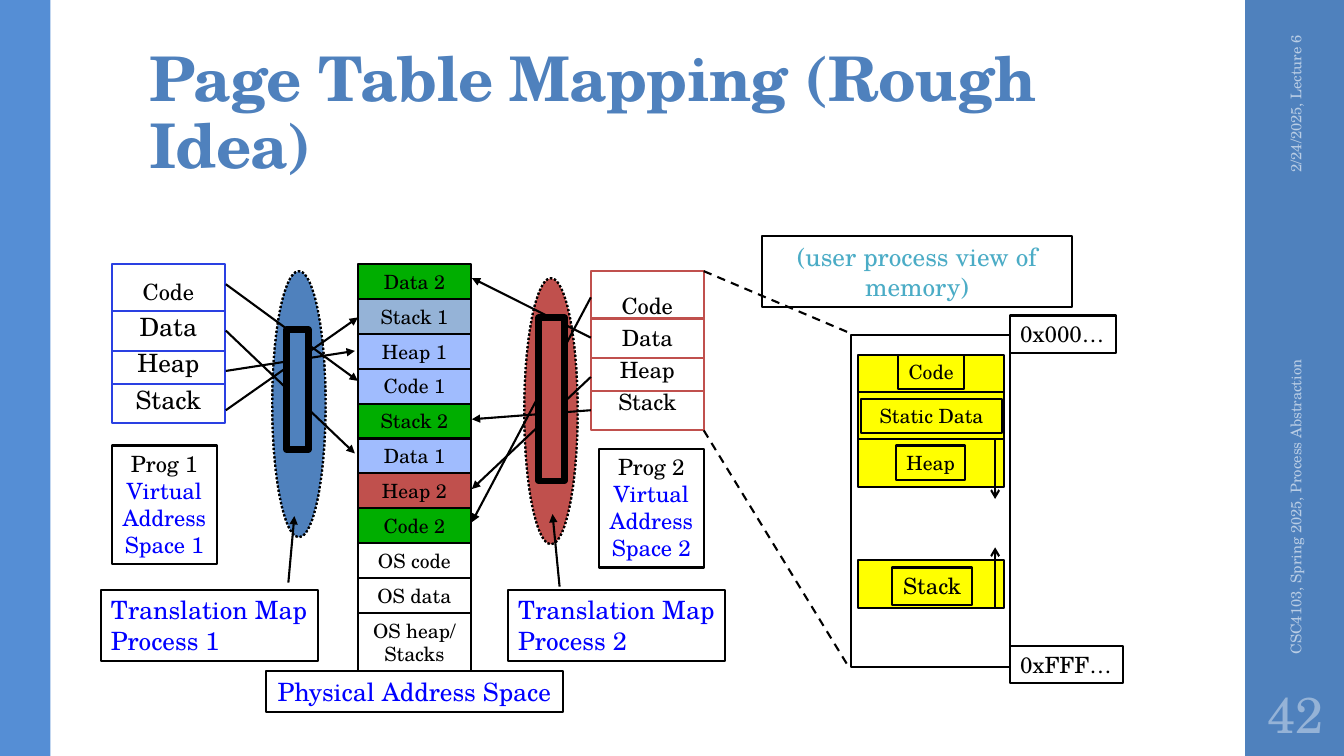
from dataclasses import dataclass
from lxml.etree import SubElement
from pptx import Presentation
from pptx.dml.color import RGBColor
from pptx.enum.dml import MSO_LINE
from pptx.enum.shapes import MSO_CONNECTOR, MSO_SHAPE
from pptx.enum.text import MSO_ANCHOR, PP_ALIGN
from pptx.oxml.ns import qn
from pptx.util import Inches, Pt


@dataclass(frozen=True)
class Theme:
    font: str = "TeX Gyre Schola"
    blue: str = "4F81BD"
    edge: str = "558ED5"
    pale: str = "B9CDE5"
    steel: str = "95B3D7"
    sky: str = "A0BCFE"
    green: str = "00AE00"
    red: str = "C0504D"
    royal: str = "2A40E2"
    yellow: str = "FFFF00"
    label: str = "0000FF"
    teal: str = "4BACC6"
    black: str = "000000"
    white: str = "FFFFFF"
    title: float = 44
    number: float = 36
    large: float = 18
    medium: float = 16
    small: float = 14
    footer: float = 10.5
    thin: float = 1.5
    thick: float = 4.5


theme = Theme()
SEGMENTS = ["Code", "Data", "Heap", "Stack"]
DIVIDERS = [0.47, 0.86, 1.19]
FRAMES = [
    ("Data 2", theme.green), ("Stack 1", theme.steel), ("Heap 1", theme.sky),
    ("Code 1", theme.sky), ("Stack 2", theme.green), ("Data 1", theme.sky),
    ("Heap 2", theme.red), ("Code 2", theme.green), ("OS code", theme.white),
    ("OS data", theme.white),
]
PROGRAMS = [
    dict(number=1, left=1.11, top=2.62, line=theme.royal, size=theme.large, fill=theme.blue,
         map=(2.7, 2.69, 0.53, 2.64), window=(2.84, 3.27, 0.22, 1.19),
         caption=(1.11, 4.42, 1.04, 1.18), legend=(1, 5.85, 2.15, 0.71),
         pointer=(2.86, 5.78, 2.92, 5.12), exit=2.24, entry=[3.55, 3.52, 3.52, 3.55],
         arrows=[(0.2, 3.35), (0.66, 5.43), (1.06, 2.49), (1.45, 1.53)]),
    dict(number=2, left=5.86, top=2.69, line=theme.red, size=theme.medium, fill=theme.red,
         map=(5.2, 2.76, 0.53, 2.64), window=(5.34, 3.15, 0.26, 1.62),
         caption=(5.94, 4.45, 1.04, 1.18), legend=(5.04, 5.85, 2.15, 0.71),
         pointer=(5.55, 5.82, 5.48, 5.1), exit=5.86, entry=[4.68] * 4,
         arrows=[(0.26, 7.4), (0.66, 0.4), (1.05, 6.45), (1.38, 4.45)]),
]
REGIONS = [
    ("Code", 3.52, 0.37, (8.91, 3.52, 0.65, 0.34), theme.small),
    ("Static Data", 3.89, 0.47, (8.54, 3.96, 1.4, 0.34), theme.small),
    ("Heap", 4.36, 0.47, (8.89, 4.42, 0.68, 0.34), theme.small),
    ("Stack", 5.56, 0.47, (8.85, 5.63, 0.79, 0.37), theme.medium),
]
ADDRESSES = [("0x000…", 10.02, 3.13, 1.05), ("0xFFF…", 10.02, 6.41, 1.12)]
GROWTH = [(9.87, 6.03, 9.87, 5.43), (9.87, 4.36, 9.87, 4.95)]
ZOOM = [(6.98, 2.69, 8.42, 3.3), (6.98, 4.27, 8.42, 6.62)]
COLUMN_LEFT, COLUMN_TOP, COLUMN_WIDTH, STACKS_TOP = 3.55, 2.62, 1.12, 6.08
ROW = (STACKS_TOP - COLUMN_TOP) / len(FRAMES)
BLOCK_HEIGHT = 1.58

deck = Presentation()
deck.slide_width, deck.slide_height = Inches(13.33), Inches(7.5)
page = deck.slides.add_slide(deck.slide_layouts[6])


def color(value):
    return RGBColor.from_string(value)


def write(shape, lines, size, ink=theme.black, align=PP_ALIGN.CENTER, anchor=MSO_ANCHOR.TOP,
          wrap=False, spacing=None, bold=False):
    frame = shape.text_frame
    frame.text = "\n".join(lines)
    frame.word_wrap = wrap
    frame.vertical_anchor = anchor
    for para in frame.paragraphs:
        para.alignment = align
        if spacing:
            para.line_spacing = spacing
        for span in para.runs:
            span.font.name = theme.font
            span.font.size = Pt(size)
            span.font.bold = bold
            span.font.color.rgb = color(ink)
    return frame


def draw(area, fill=None, line=theme.black, width=theme.thin, kind=MSO_SHAPE.RECTANGLE, dash=None):
    shape = page.shapes.add_shape(kind, *map(Inches, area))
    shape.shadow.inherit = False
    if fill:
        shape.fill.solid()
        shape.fill.fore_color.rgb = color(fill)
    else:
        shape.fill.background()
    if line:
        shape.line.color.rgb = color(line)
        shape.line.width = Pt(width)
        shape.line.dash_style = dash
    else:
        shape.line.fill.background()
    return shape


def connect(ends, line=theme.black, head=None, dash=None):
    link = page.shapes.add_connector(MSO_CONNECTOR.STRAIGHT, *map(Inches, ends))
    link.line.color.rgb = color(line)
    link.line.width = Pt(theme.thin)
    link.line.dash_style = dash
    if head:
        SubElement(link.line._get_or_add_ln(), qn("a:tailEnd"), type=head)
    SubElement(link._element.spPr, qn("a:effectLst"))


def add_text(area, line, size, ink, rotation=0, **style):
    box = page.shapes.add_textbox(*map(Inches, area))
    box.rotation = rotation
    return write(box, [line], size, ink, wrap=True, **style)


def draw_map(program, fill=None):
    draw(program["map"], fill, kind=MSO_SHAPE.OVAL, dash=MSO_LINE.ROUND_DOT)


def draw_program(program):
    left, top = program["left"], program["top"]
    block = draw((left, top, COLUMN_WIDTH, BLOCK_HEIGHT), theme.white, program["line"])
    frame = write(block, SEGMENTS, program["size"], anchor=MSO_ANCHOR.MIDDLE, spacing=1.2)
    frame.paragraphs[0].runs[0].font.size = Pt(theme.medium)
    for offset in DIVIDERS:
        connect((left, top + offset, left + COLUMN_WIDTH, top + offset), program["line"])
    number = program["number"]
    caption = write(draw(program["caption"]),
                    [f"Prog {number}", "Virtual", "Address", f"Space {number}"],
                    theme.medium, theme.label)
    caption.paragraphs[0].runs[0].font.color.rgb = color(theme.black)
    write(draw(program["legend"]), ["Translation Map", f"Process {number}"],
          theme.large, theme.label, PP_ALIGN.LEFT)


def draw_translation(program):
    for (offset, row), entry in zip(program["arrows"], program["entry"]):
        connect((program["exit"], program["top"] + offset, entry, COLUMN_TOP + row * ROW),
                head="triangle")
    draw(program["window"], program["fill"], width=theme.thick)
    draw_map(program)
    connect(program["pointer"], head="triangle")


def draw_physical_memory():
    cells = [([name], COLUMN_TOP + row * ROW, ROW, fill)
             for row, (name, fill) in enumerate(FRAMES)]
    cells.append((["OS heap/", "Stacks"], STACKS_TOP, 0.58, theme.white))
    for lines, top, height, fill in cells:
        cell = draw((COLUMN_LEFT, top, COLUMN_WIDTH, height), fill)
        write(cell, lines, theme.small, anchor=MSO_ANCHOR.MIDDLE)
    write(draw((2.64, 6.66, 2.94, 0.4)), ["Physical Address Space"], theme.large, theme.label)


def draw_process_view():
    draw((8.44, 3.32, 1.58, 3.3))
    for text, left, top, width in ADDRESSES:
        write(draw((left, top, width, 0.37)), [text], theme.medium, align=PP_ALIGN.LEFT)
    for name, top, height, tag, size in REGIONS:
        draw((8.51, top, 1.45, height), theme.yellow)
        write(draw(tag, theme.yellow), [name], size)
    for ends in GROWTH:
        connect(ends, head="arrow")
    for ends in ZOOM:
        connect(ends, dash=MSO_LINE.DASH)
    write(draw((7.56, 2.34, 3.07, 0.71)), ["(user process view of memory)"],
          theme.large, theme.teal, wrap=True)


def draw_frame():
    draw((12.35, 0, 1, 7.5), theme.blue, None)
    draw((0, 0, 0.5, 7.5), theme.edge, None)
    title = add_text((1.38, 0.32, 10.6, 1.53), "Page Table Mapping (Rough Idea)", theme.title,
                     theme.blue, align=PP_ALIGN.LEFT, anchor=MSO_ANCHOR.BOTTOM,
                     spacing=0.9, bold=True)
    title.margin_top = Inches(0.03)
    title.paragraphs[0].runs[0].font._element.set("spc", "-50")
    add_text((11.81, 1.09, 2.08, 0.4), "2/24/2025, Lecture 6", theme.footer, theme.pale, 270,
             align=PP_ALIGN.RIGHT, anchor=MSO_ANCHOR.MIDDLE)
    add_text((10.89, 4.43, 3.92, 0.4), "CSC4103, Spring 2025, Process Abstraction", theme.footer,
             theme.pale, 270, align=PP_ALIGN.LEFT, anchor=MSO_ANCHOR.MIDDLE)
    number = add_text((12.35, 6.75, 1, 0.65), "42", theme.number, theme.steel,
                      anchor=MSO_ANCHOR.MIDDLE)
    number.margin_left = number.margin_right = Inches(0.05)


draw_frame()
for program in PROGRAMS:
    draw_map(program, program["fill"])
    draw_program(program)
draw_physical_memory()
for program in PROGRAMS:
    draw_translation(program)
draw_process_view()
deck.save("out.pptx")
